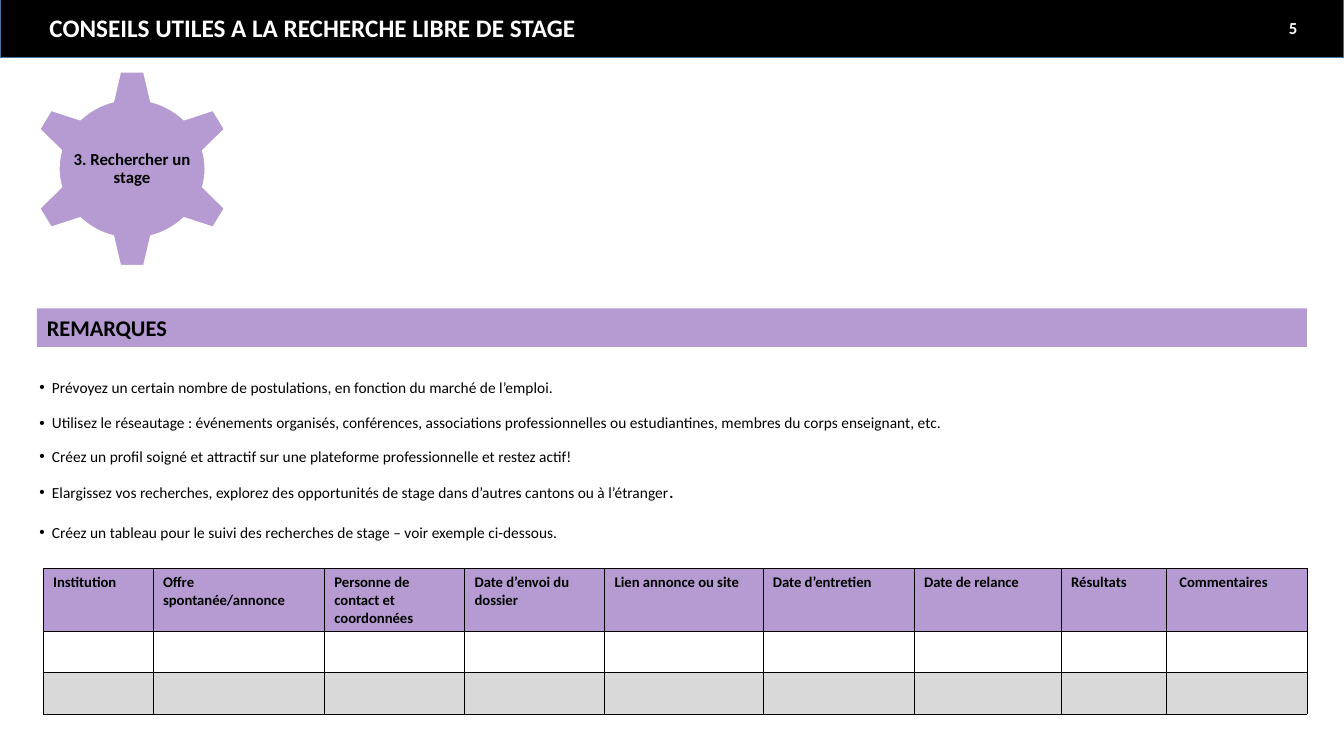
from lxml.etree import SubElement
from pptx import Presentation
from pptx.dml.color import RGBColor
from pptx.enum.shapes import MSO_SHAPE as Shape
from pptx.enum.text import MSO_ANCHOR as Anchor, MSO_AUTO_SIZE as AutoSize, PP_ALIGN as Align
from pptx.oxml import parse_xml
from pptx.oxml.ns import nsdecls, qn
from pptx.util import Pt

COLOURS = {"black": "000000", "white": "FFFFFF", "lilac": "B59BD1",
           "grey": "D9D9D9", "blue": "43739E"}


def colour(name):
    return RGBColor.from_string(COLOURS[name])


def write(para, text, size=11, ink="black", bold=False, align=Align.LEFT):
    """Append one formatted run to a paragraph."""
    para.alignment = align
    span = para.add_run()
    span.text = text
    span.font.name = "Calibri"
    span.font.size = Pt(size)
    span.font.bold = bold
    span.font.color.rgb = colour(ink)


deck = Presentation()
deck.slide_width, deck.slide_height = Pt(960), Pt(540)
page = deck.slides.add_slide(deck.slide_layouts[1])

# Title band
title = page.shapes.title
title.left, title.top, title.width, title.height = Pt(0), Pt(-1.4), Pt(960), Pt(42.5)
title.fill.solid()
title.fill.fore_color.rgb = colour("black")
title.line.color.rgb = colour("blue")
title.line.width = Pt(1)
frame = title.text_frame
frame.auto_size = AutoSize.NONE
frame.vertical_anchor = Anchor.MIDDLE
frame.margin_left = Pt(35.3)
write(frame.paragraphs[0], "CONSEILS UTILES A LA RECHERCHE LIBRE DE STAGE",
      size=18, ink="white", bold=True)

# Page number
number = page.shapes.add_textbox(Pt(717.8), Pt(5.8), Pt(216), Pt(28.8))
frame = number.text_frame
frame.word_wrap = True
frame.vertical_anchor = Anchor.MIDDLE
write(frame.paragraphs[0], "5", size=12, ink="white", bold=True, align=Align.RIGHT)

# Step gear and section heading
gear = page.shapes.add_shape(Shape.GEAR_6, Pt(20.9), Pt(49.7), Pt(147), Pt(141.8))
heading = page.shapes.add_shape(Shape.RECTANGLE, Pt(26.4), Pt(220.3), Pt(907.2), Pt(27.5))
for box in (gear, heading):
    box.shadow.inherit = False
    box.fill.solid()
    box.fill.fore_color.rgb = colour("lilac")
    box.text_frame.vertical_anchor = Anchor.MIDDLE
heading.line.fill.background()
write(heading.text_frame.paragraphs[0], "REMARQUES", size=16, bold=True)

gear.line.color.rgb = colour("white")
gear.line.width = Pt(1)
gear.text_frame.word_wrap = False
para = gear.text_frame.paragraphs[0]
para.line_spacing = 0.9
write(para, "3. Rechercher un", size=12, bold=True, align=Align.CENTER)
para.add_line_break()
write(para, "stage", size=12, bold=True, align=Align.CENTER)

# Advice list: text and space before, in points
ADVICE = [
    ("Prévoyez un certain nombre de postulations, en fonction du marché de l’emploi.", 0),
    ("Utilisez le réseautage : événements organisés, conférences, associations "
     "professionnelles ou estudiantines, membres du corps enseignant, etc.", 10.5),
    ("Créez un profil soigné et attractif sur une plateforme professionnelle "
     "et restez actif!", 8.5),
    ("Elargissez vos recherches, explorez des opportunités de stage dans d’autres "
     "cantons ou à l’étranger", 11),
    ("Créez un tableau pour le suivi des recherches de stage – voir exemple "
     "ci-dessous.", 13.5),
]
advice = page.placeholders[1]
advice.left, advice.top, advice.width, advice.height = Pt(20.9), Pt(264.2), Pt(910), Pt(128)
frame = advice.text_frame
frame.auto_size = AutoSize.NONE
for index, (text, gap) in enumerate(ADVICE):
    para = frame.add_paragraph() if index else frame.paragraphs[0]
    para.line_spacing = 1.15
    para.space_before = Pt(gap)
    para.space_after = Pt(0)
    write(para, text)
    if not text.endswith((".", "!")):
        write(para, ".", bold=True)
    properties = para._p.get_or_add_pPr()
    properties.set("marL", str(Pt(9)))
    properties.set("indent", str(Pt(-9)))
    SubElement(properties, qn("a:buFont")).set("typeface", "Arial")
    SubElement(properties, qn("a:buChar")).set("char", "•")

# Tracking table: header and column width, in points
COLUMNS = [("Institution", 78.5), ("Offre spontanée/annonce", 122.4),
           ("Personne de contact et coordonnées", 100.1), ("Date d’envoi du dossier", 100.1),
           ("Lien annonce ou site", 113), ("Date d’entretien", 108),
           ("Date de relance", 105.1), ("Résultats", 74.9), ("Commentaires", 100.8)]
ROWS = [("lilac", 45), ("white", 29.5), ("grey", 29.5)]
table = page.shapes.add_table(len(ROWS), len(COLUMNS), Pt(30.8), Pt(406), Pt(902.9), Pt(104)).table
table.first_row = table.horz_banding = False
for column, (header, width) in enumerate(COLUMNS):
    table.columns[column].width = Pt(width)
    write(table.cell(0, column).text_frame.paragraphs[0], header, size=10.5, bold=True)
table.cell(0, len(COLUMNS) - 1).margin_left = Pt(9.6)

for row, (fill, height) in enumerate(ROWS):
    table.rows[row].height = Pt(height)
    for cell in table.rows[row].cells:
        cell.fill.solid()
        cell.fill.fore_color.rgb = colour(fill)
        for place, side in enumerate(("lnL", "lnR", "lnT", "lnB")):
            border = parse_xml(
                f'<a:{side} {nsdecls("a")} w="{Pt(0.5)}"><a:solidFill>'
                f'<a:srgbClr val="{COLOURS["black"]}"/></a:solidFill></a:{side}>')
            cell._tc.get_or_add_tcPr().insert(place, border)

deck.save("out.pptx")
